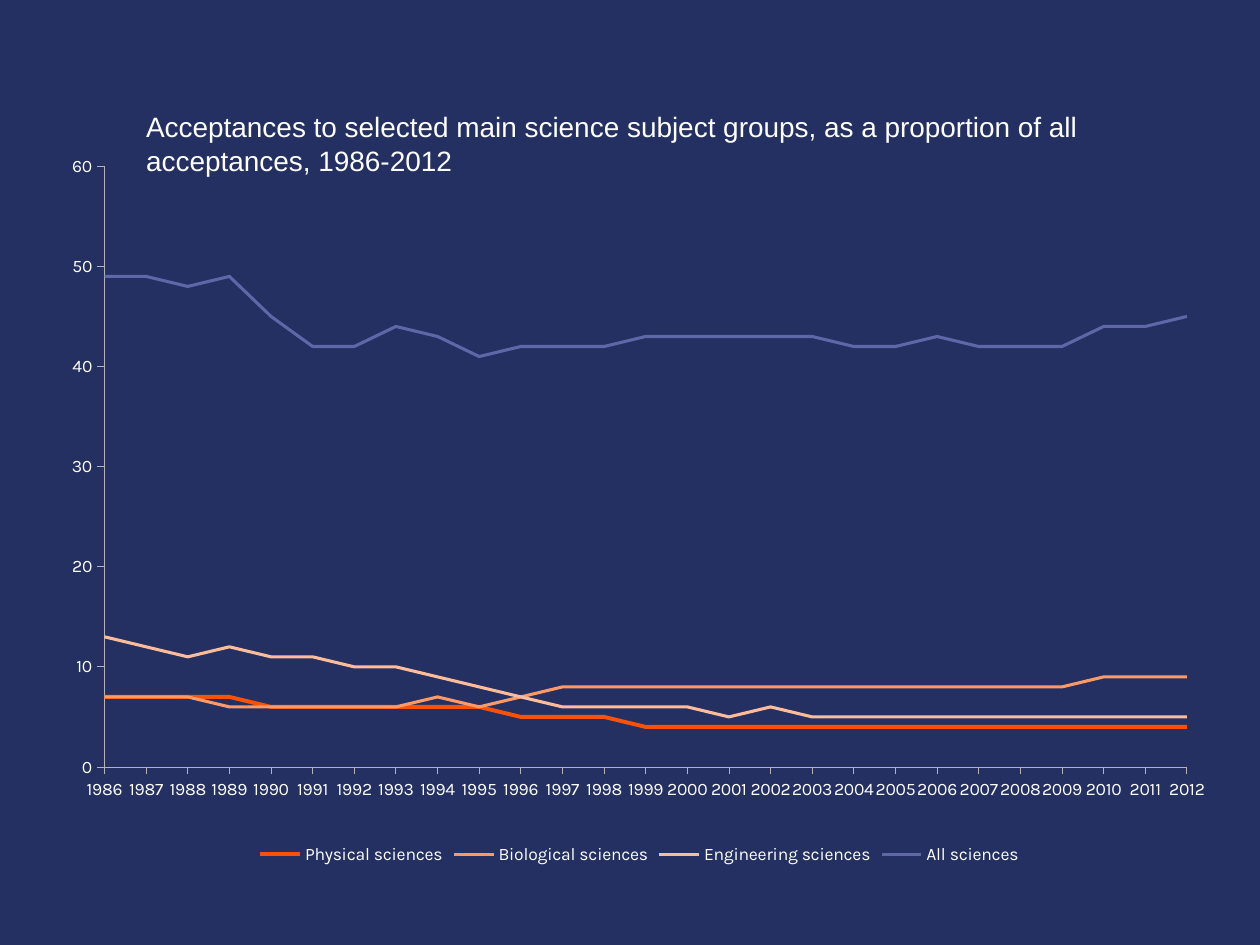
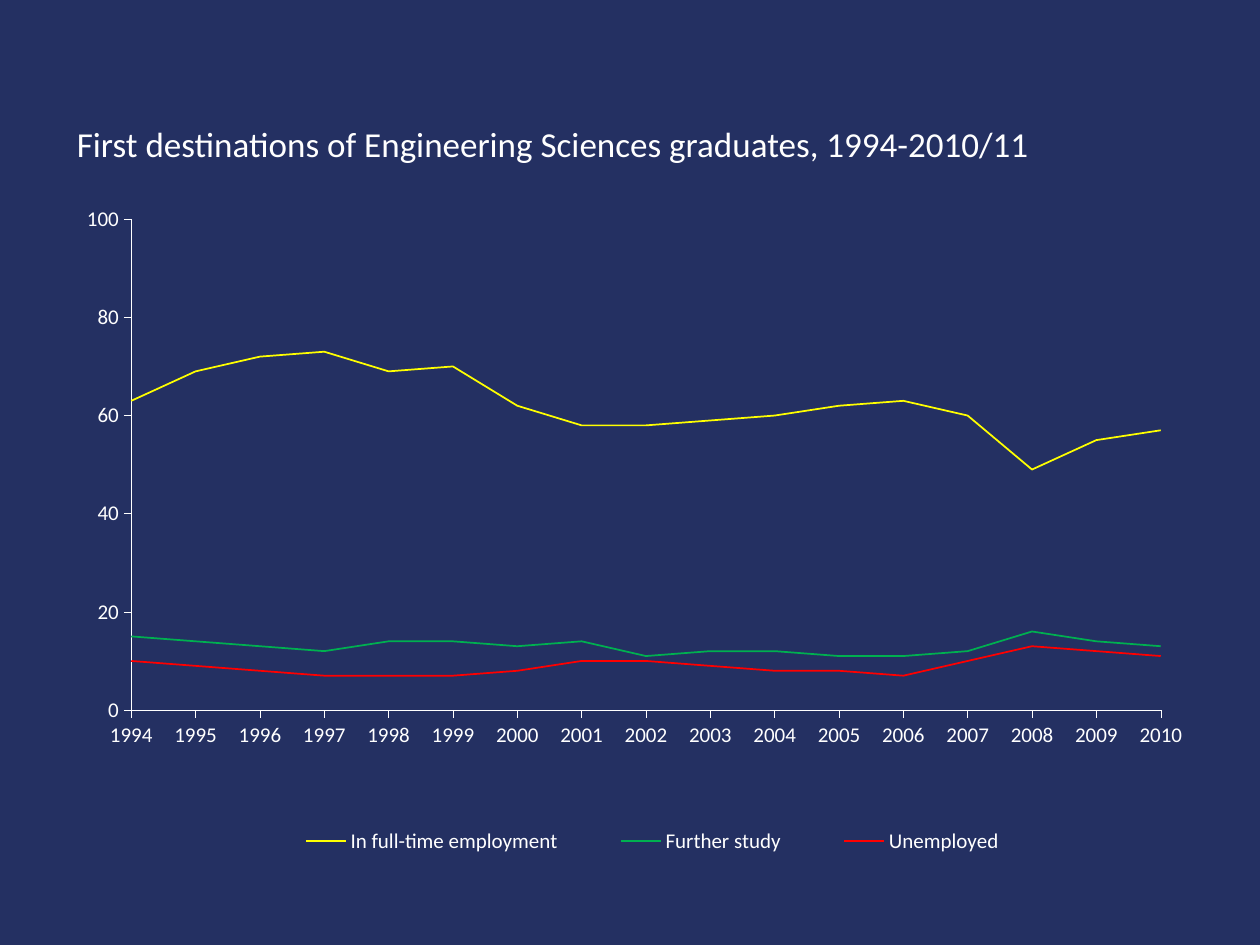
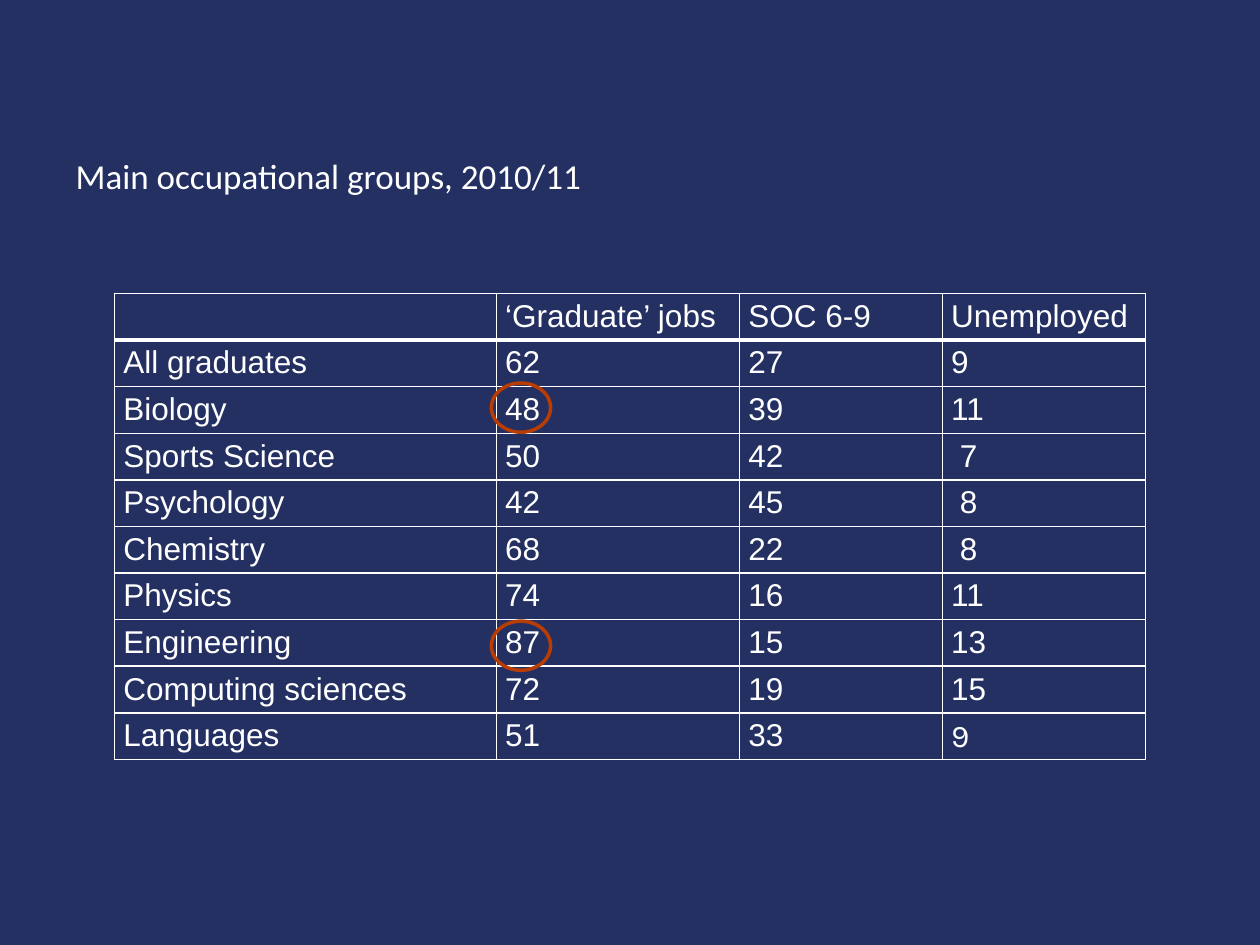
from lxml import etree
from pptx import Presentation
from pptx.chart.data import CategoryChartData
from pptx.dml.color import RGBColor
from pptx.enum.chart import XL_CHART_TYPE as ChartType, XL_LEGEND_POSITION as LegendPos
from pptx.enum.chart import XL_TICK_MARK as TickMark
from pptx.enum.shapes import MSO_SHAPE as Shape
from pptx.enum.text import MSO_ANCHOR as Anchor, MSO_AUTO_SIZE as AutoSize, PP_ALIGN as Align
from pptx.oxml.ns import qn
from pptx.util import Inches, Pt

NAVY, WHITE, GREY, RUST = "243062", "FFFFFF", "B3B3B3", "B83D05"

ACCEPTANCES = dict(
    title="Acceptances to selected main science subject groups, "
          "as a proportion of all acceptances, 1986-2012",
    title_box=(1.06, 0.82, 8.43, 0.64), title_font="Arial", title_size=16,
    box=(0.51, 1.23, 9.13, 5.67), font="Karla", size=10,
    years=range(1986, 2013), top=60, step=10, axis=(GREY, 0.5),
    plot=(0.035, 0.016, 0.941, 0.841), legend=None,
    series=[
        ("Physical sciences", "F95207", 2.25,
         [7] * 4 + [6] * 6 + [5] * 3 + [4] * 14),
        ("Biological sciences", "FF9966", 1.75,
         [7] * 3 + [6] * 5 + [7, 6, 7] + [8] * 13 + [9] * 3),
        ("Engineering sciences", "FFBC9B", 1.75,
         [13, 12, 11, 12, 11, 11, 10, 10, 9, 8, 7, 6, 6, 6, 6, 5, 6] + [5] * 10),
        ("All sciences", "6067A8", 1.75,
         [49, 49, 48, 49, 45, 42, 42, 44, 43, 41, 42, 42, 42, 43,
          43, 43, 43, 43, 42, 42, 43, 42, 42, 42, 44, 44, 45]),
    ])

DESTINATIONS = dict(
    title="First destinations of Engineering Sciences graduates, 1994-2010/11",
    title_box=(0.51, 0.92, 9, 0.84), title_font="Calibri", title_size=20,
    box=(0.43, 1.31, 9.13, 5.59), font="Calibri", size=12,
    years=range(1994, 2011), top=100, step=20, axis=(WHITE, 0.25),
    plot=(0.067, 0.077, 0.895, 0.697), legend=(0.17, 0.93, 0.7, 0.06),
    series=[
        ("In full-time employment", "FFFF00", 1,
         [63, 69, 72, 73, 69, 70, 62, 58, 58, 59, 60, 62, 63, 60, 49, 55, 57]),
        ("Further study", "00B050", 1,
         [15, 14, 13, 12, 14, 14, 13, 14, 11, 12, 12, 11, 11, 12, 16, 14, 13]),
        ("Unemployed", "FF0000", 1,
         [10, 9, 8, 7, 7, 7, 8, 10, 10, 9, 8, 8, 7, 10, 13, 12, 11]),
    ])

OCCUPATIONS = [
    ("", "‘Graduate’ jobs", "SOC 6-9", "Unemployed"),
    ("All graduates", "62", "27", "9"),
    ("Biology", "48", "39", "11"),
    ("Sports Science", "50", "42", " 7"),
    ("Psychology", "42", "45", " 8"),
    ("Chemistry", "68", "22", " 8"),
    ("Physics", "74", "16", "11"),
    ("Engineering", "87", "15", "13"),
    ("Computing sciences", "72", "19", "15"),
    ("Languages", "51", "33", "9"),
]
COLUMN_WIDTHS = (3.03, 1.93, 1.61, 1.61)
ROW_HEIGHT = 0.37
TABLE_LEFT, TABLE_TOP = 0.91, 2.33
RING_LEFT, RING_TOPS, RING_SIZE = 3.9, (3.04, 4.93), (0.47, 0.39)


def rgb(code):
    return RGBColor.from_string(code)


def inches(values):
    return [Inches(value) for value in values]


def put_text(frame, text, font="Arial", size=18, color=WHITE, spacing=None):
    paragraph = frame.paragraphs[0]
    paragraph.alignment = Align.LEFT
    paragraph.line_spacing = spacing
    if text:
        run = paragraph.add_run()
        run.text = text
        run.font.name, run.font.size = font, Pt(size)
        run.font.color.rgb = rgb(color)


def add_titled_slide(deck, text, box, font, size):
    slide = deck.slides.add_slide(deck.slide_layouts[5])
    title = slide.shapes.title
    title.left, title.top, title.width, title.height = inches(box)
    frame = title.text_frame
    frame.word_wrap, frame.auto_size = True, AutoSize.NONE
    frame.vertical_anchor = Anchor.TOP
    put_text(frame, text, font=font, size=size)
    return slide


def place_in_chart(part, index, shares, inner=False):
    """Fix a chart part at shares of the chart's size (x, y, w, h)."""
    for old in part.findall(qn("c:layout")):
        part.remove(old)
    layout = etree.Element(qn("c:layout"))
    part.insert(index, layout)
    manual = etree.SubElement(layout, qn("c:manualLayout"))
    settings = [("layoutTarget", "inner")] if inner else []
    settings += [("xMode", "edge"), ("yMode", "edge"), *zip("xywh", shares)]
    for tag, value in settings:
        etree.SubElement(manual, qn(f"c:{tag}")).set("val", str(value))


def style_axes(chart, content):
    color, width = content["axis"]
    years, values = chart.category_axis, chart.value_axis
    for axis in (years, values):
        axis.has_major_gridlines = False
        axis.major_tick_mark, axis.minor_tick_mark = TickMark.OUTSIDE, TickMark.NONE
        axis.format.line.color.rgb = rgb(color)
        axis.format.line.width = Pt(width)
    values.minimum_scale, values.maximum_scale = 0, content["top"]
    values.major_unit = content["step"]

    area = chart.element.find(".//" + qn("c:plotArea"))
    value_xml, year_xml = area.find(qn("c:valAx")), area.find(qn("c:catAx"))
    for old in value_xml.findall(qn("c:crossBetween")):
        value_xml.remove(old)
    between = etree.Element(qn("c:crossBetween"), val="midCat")
    value_xml.find(qn("c:crosses")).addnext(between)
    every_label = etree.Element(qn("c:tickLblSkip"), val="1")
    year_xml.find(qn("c:noMultiLvlLbl")).addprevious(every_label)
    place_in_chart(area, 0, content["plot"], inner=True)


def add_line_slide(deck, content):
    slide = add_titled_slide(deck, content["title"], content["title_box"],
                             content["title_font"], content["title_size"])
    data = CategoryChartData()
    data.categories = [str(year) for year in content["years"]]
    for name, _, _, values in content["series"]:
        data.add_series(name, values)
    chart = slide.shapes.add_chart(ChartType.LINE, *inches(content["box"]), data).chart
    chart.has_title = False
    chart.font.name, chart.font.size = content["font"], Pt(content["size"])
    chart.font.color.rgb = rgb(WHITE)
    chart.plots[0].vary_by_categories = False
    for series, (_, color, width, _) in zip(chart.series, content["series"]):
        series.smooth = False
        series.format.line.color.rgb = rgb(color)
        series.format.line.width = Pt(width)
    style_axes(chart, content)
    chart.has_legend = True
    chart.legend.position = LegendPos.BOTTOM
    chart.legend.include_in_layout = False
    if content["legend"]:
        place_in_chart(chart.element.find(".//" + qn("c:legend")), 1, content["legend"])


def set_borders(cell, **widths):
    properties = cell._tc.get_or_add_tcPr()
    for index, side in enumerate("LRTB"):
        line = etree.Element(qn(f"a:ln{side}"), w=str(Pt(widths.get(side, 1))))
        fill = etree.SubElement(line, qn("a:solidFill"))
        etree.SubElement(fill, qn("a:srgbClr"), val=WHITE)
        properties.insert(index, line)


def add_occupations_slide(deck):
    slide = add_titled_slide(deck, "Main occupational groups, 2010/11",
                             (0.5, 1.18, 9, 0.84), "Calibri", 20)
    rows, columns = len(OCCUPATIONS), len(COLUMN_WIDTHS)
    box = inches((TABLE_LEFT, TABLE_TOP, sum(COLUMN_WIDTHS), rows * ROW_HEIGHT))
    table = slide.shapes.add_table(rows, columns, *box).table
    table.first_row = table.horz_banding = False
    for column, width in zip(table.columns, COLUMN_WIDTHS):
        column.width = Inches(width)
    for r, row in enumerate(OCCUPATIONS):
        table.rows[r].height = Inches(ROW_HEIGHT)
        for c, text in enumerate(row):
            cell = table.cell(r, c)
            cell.fill.background()
            cell.margin_left = cell.margin_right = Inches(0.07)
            cell.margin_top = cell.margin_bottom = 0
            is_last = (r, c) == (rows - 1, columns - 1)
            put_text(cell.text_frame, text, font="Karla" if is_last else "Arial",
                     spacing=1.15)
            set_borders(cell, T=3 if r == 1 else 1, B=3 if r == 0 else 1)
    for top in RING_TOPS:
        ring = slide.shapes.add_shape(Shape.OVAL, *inches((RING_LEFT, top, *RING_SIZE)))
        ring.shadow.inherit = False
        ring.fill.background()
        ring.line.color.rgb = rgb(RUST)
        ring.line.width = Pt(2)


def main():
    deck = Presentation()
    deck.slide_width, deck.slide_height = inches((10, 7.5))
    background = deck.slide_master.background.fill
    background.solid()
    background.fore_color.rgb = rgb(NAVY)
    for content in (ACCEPTANCES, DESTINATIONS):
        add_line_slide(deck, content)
    add_occupations_slide(deck)
    deck.save("out.pptx")


if __name__ == "__main__":
    main()
